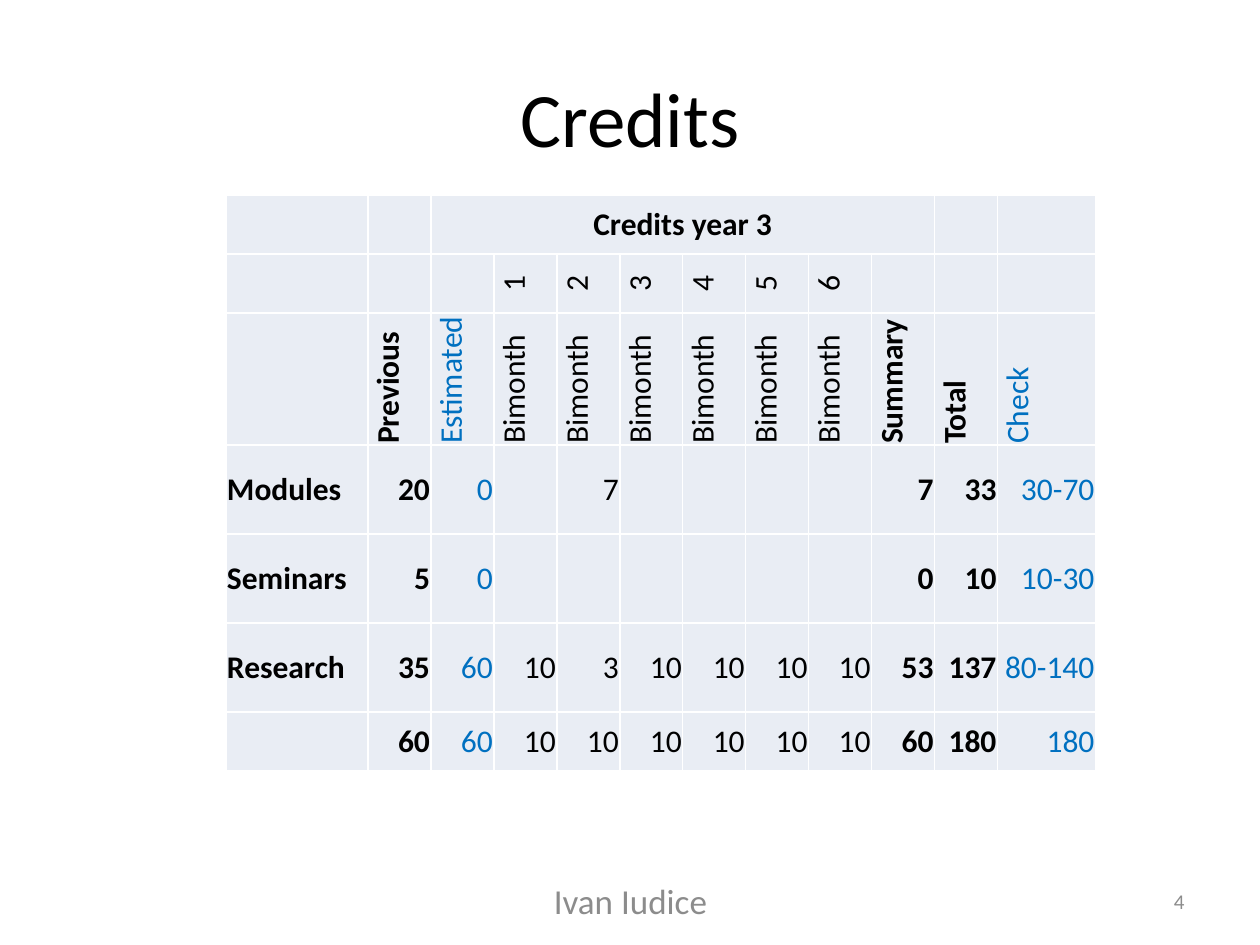
from lxml import etree
from pptx import Presentation
from pptx import util as u
from pptx.dml.color import RGBColor
from pptx.enum import text
from pptx.oxml import ns

SCALE = 914400 // 126  # EMU in one px
COLORS = {"black": "000000", "blue": "0070C0", "gray": "8C8C8C",
          "cell": "E9EDF4", "border": "FFFFFF"}
LEFT, CENTER, RIGHT = text.PP_ALIGN.LEFT, text.PP_ALIGN.CENTER, text.PP_ALIGN.RIGHT

# text, box (left, top, width, height), size, color, alignment
TEXT_BOXES = [
    ("Ivan Iudice", (431, 876, 399, 50), 20, "gray", CENTER),
    ("4", (903, 876, 294, 50), 12, "gray", RIGHT),
    ("Credits", (63, 38, 1134, 157), 44, "black", CENTER),
]

TABLE_LEFT, TABLE_TOP = 226, 195
COLUMN_WIDTHS = [142] + [63] * 10 + [98]
ROW_HEIGHTS = [59, 59, 132, 89, 89, 89, 59]
BOLD_COLUMNS = {0, 1, 9, 10}
BLUE_COLUMNS = {2, 11}
TITLE_ROW, NUMBER_ROW, LABEL_ROW = 0, 1, 2
TITLE_SPAN = (2, 9)
CREDITS = [
    ["", "", "Credits year 3"] + [""] * 9,
    ["", "", "", "1", "2", "3", "4", "5", "6", "", "", ""],
    ["", "Previous", "Estimated"] + ["Bimonth"] * 6 + ["Summary", "Total", "Check"],
    ["Modules", "20", "0", "", "7", "", "", "", "", "7", "33", "30-70"],
    ["Seminars", "5", "0", "", "", "", "", "", "", "0", "10", "10-30"],
    ["Research", "35", "60", "10", "3", "10", "10", "10", "10", "53", "137", "80-140"],
    ["", "60", "60", "10", "10", "10", "10", "10", "10", "60", "180", "180"],
]


def px(value):
    return u.Emu(value * SCALE)


def write(frame, words, size, color, alignment, bold=False):
    paragraph = frame.paragraphs[0]
    paragraph.alignment = alignment
    run = paragraph.add_run()
    run.text = words
    for name, value in {"name": "Calibri", "size": u.Pt(size), "bold": bold}.items():
        setattr(run.font, name, value)
    run.font.color.rgb = RGBColor.from_string(COLORS[color])


def add_text_box(slide, words, box, size, color, alignment):
    frame = slide.shapes.add_textbox(*map(px, box)).text_frame
    frame.word_wrap = True
    frame.vertical_anchor = text.MSO_ANCHOR.MIDDLE
    write(frame, words, size, color, alignment)


def paint_cell(cell):
    """Give the cell its borders and then its fill, in schema order."""
    properties = cell._tc.get_or_add_tcPr()
    for side in ("lnL", "lnR", "lnT", "lnB"):
        line = etree.SubElement(properties, ns.qn(f"a:{side}"), w=str(u.Pt(1)))
        fill = etree.SubElement(line, ns.qn("a:solidFill"))
        etree.SubElement(fill, ns.qn("a:srgbClr"), val=COLORS["border"])
    cell.fill.solid()
    cell.fill.fore_color.rgb = RGBColor.from_string(COLORS["cell"])


def cell_style(row, column):
    """Return color, alignment and bold for a cell."""
    if row == TITLE_ROW:
        return "black", CENTER, True
    color = "blue" if column in BLUE_COLUMNS else "black"
    if row == NUMBER_ROW:
        alignment = CENTER
    else:
        alignment = LEFT if row == LABEL_ROW or column == 0 else RIGHT
    return color, alignment, column in BOLD_COLUMNS


def fill_cell(cell, words, row, column):
    cell_format = {"margin_left": px(1), "margin_right": px(1), "margin_top": px(1),
                   "margin_bottom": 0, "vertical_anchor": text.MSO_ANCHOR.MIDDLE}
    for name, value in cell_format.items():
        setattr(cell, name, value)
    if row in (NUMBER_ROW, LABEL_ROW):
        cell._tc.get_or_add_tcPr().set("vert", "vert270")
    color, alignment, bold = cell_style(row, column)
    write(cell.text_frame, words, 18, color, alignment, bold)


def add_credits_table(slide):
    box = (TABLE_LEFT, TABLE_TOP, sum(COLUMN_WIDTHS), sum(ROW_HEIGHTS))
    table = slide.shapes.add_table(len(ROW_HEIGHTS), len(COLUMN_WIDTHS),
                                   *map(px, box)).table
    table.first_row = table.horz_banding = False
    for column, width in zip(table.columns, COLUMN_WIDTHS):
        column.width = px(width)
    for row, height in zip(table.rows, ROW_HEIGHTS):
        row.height = px(height)
    first, last = TITLE_SPAN
    table.cell(TITLE_ROW, first).merge(table.cell(TITLE_ROW, last))
    for row, values in enumerate(CREDITS):
        for column, words in enumerate(values):
            cell = table.cell(row, column)
            paint_cell(cell)
            if words:
                fill_cell(cell, words, row, column)


def main():
    presentation = Presentation()
    presentation.slide_width, presentation.slide_height = px(1260), px(945)
    slide = presentation.slides.add_slide(presentation.slide_layouts[6])
    for text_box in TEXT_BOXES:
        add_text_box(slide, *text_box)
    add_credits_table(slide)
    presentation.save("out.pptx")


if __name__ == "__main__":
    main()
